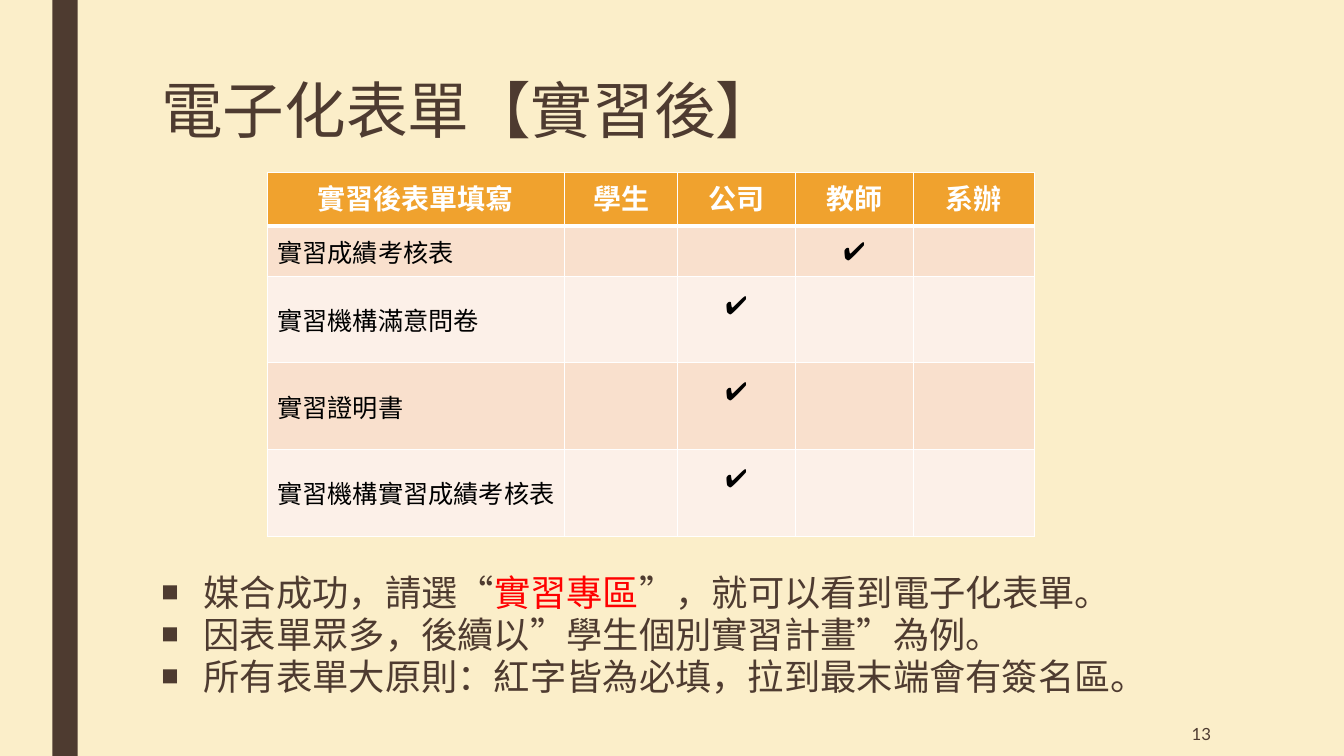
from lxml import etree
from pptx import Presentation
from pptx.dml.color import RGBColor
from pptx.enum import shapes, text
from pptx.oxml import ns
from pptx.util import Inches, Pt

CJK = "Noto Sans CJK TC"
BROWN, WHITE, BLACK, RED = "4E3B30", "FFFFFF", "000000", "FF0000"
CREAM, ORANGE = "FBEEC9", "F0A22E"
BANDS = ("F9E0CD", "FCF0E8")

HEADINGS = ("實習後表單填寫", "學生", "公司", "教師", "系辦")
COMPANY, TEACHER = 2, 3
FORMS = (
    ("實習成績考核表", TEACHER),
    ("實習機構滿意問卷", COMPANY),
    ("實習證明書", COMPANY),
    ("實習機構實習成績考核表", COMPANY),
)
COLUMN_WIDTHS = (2.95, 1.12, 1.17, 1.17, 1.2)
ROW_HEIGHTS = (0.53, 0.5, 0.86, 0.86, 0.86)
NOTES = (
    (("媒合成功，請選“", BROWN), ("實習專區", RED),
     ("”，就可以看到電子化表單。", BROWN)),
    (("因表單眾多，後續以”學生個別實習計畫”為例。", BROWN),),
    (("所有表單大原則：紅字皆為必填，拉到最末端會有簽名區。", BROWN),),
)


def paint(color_format, color):
    color_format.rgb = RGBColor.from_string(color)


def fill(target, color):
    target.fill.solid()
    paint(target.fill.fore_color, color)


def add_xml(parent, tag, **attributes):
    return etree.SubElement(parent, ns.qn(tag), attributes)


def write(paragraph, wording, size=18, font="Lato", color=BROWN, bold=False, align=None):
    run = paragraph.add_run()
    run.text = wording
    run.font.size, run.font.name, run.font.bold = Pt(size), font, bold
    paint(run.font.color, color)
    add_xml(run._r.get_or_add_rPr(), "a:ea", typeface=CJK)
    if align is not None:
        paragraph.alignment = align


def add_borders(cell, bottom_width):
    properties = cell._tc.get_or_add_tcPr()
    widths = {"a:lnL": 1, "a:lnR": 1, "a:lnT": 1, "a:lnB": bottom_width}
    for tag, width in widths.items():
        border = add_xml(properties, tag, w=str(Pt(width)))
        add_xml(add_xml(border, "a:solidFill"), "a:srgbClr", val=WHITE)


def add_bullet(paragraph):
    properties = paragraph._p.get_or_add_pPr()
    properties.set("marL", str(Inches(0.42)))
    properties.set("indent", str(Inches(-0.42)))
    add_xml(properties, "a:buSzPct", val="80000")
    add_xml(properties, "a:buFont", typeface="Arial")
    add_xml(properties, "a:buChar", char="■")


class FormSlide:
    """Holds the slide and draws its parts in the shared style."""

    def __init__(self, presentation):
        self.slide = presentation.slides.add_slide(presentation.slide_layouts[1])
        fill(self.slide.background, CREAM)

    def place(self, holder, left, top, width, height, anchor=text.MSO_ANCHOR.TOP):
        """Move a text holder and return its text frame."""
        holder.left, holder.top = Inches(left), Inches(top)
        holder.width, holder.height = Inches(width), Inches(height)
        frame = holder.text_frame
        frame.word_wrap = True
        frame.auto_size = text.MSO_AUTO_SIZE.NONE
        frame.vertical_anchor = anchor
        return frame

    def stripe(self, left, width, height):
        bar = self.slide.shapes.add_shape(
            shapes.MSO_SHAPE.RECTANGLE, Inches(left), 0, Inches(width), Inches(height))
        bar.shadow.inherit = False
        fill(bar, BROWN)
        bar.line.fill.background()

    def title(self, wording):
        frame = self.place(self.slide.shapes.title, 1.5, 0.75, 10.5, 1.62)
        heading = frame.paragraphs[0]
        heading.line_spacing = 0.89
        write(heading, wording, size=44, align=text.PP_ALIGN.LEFT)

    def form_table(self, left, top):
        table = self.slide.shapes.add_table(
            len(ROW_HEIGHTS), len(COLUMN_WIDTHS), Inches(left), Inches(top),
            Inches(sum(COLUMN_WIDTHS)), Inches(sum(ROW_HEIGHTS))).table
        for column, width in zip(table.columns, COLUMN_WIDTHS):
            column.width = Inches(width)
        for row, height in zip(table.rows, ROW_HEIGHTS):
            row.height = Inches(height)

        center = text.PP_ALIGN.CENTER
        for column, heading in enumerate(HEADINGS):
            cell = table.cell(0, column)
            add_borders(cell, 3)
            fill(cell, ORANGE)
            write(cell.text_frame.paragraphs[0], heading, size=20, color=WHITE,
                  bold=True, align=center)
        for row, (form, filler) in enumerate(FORMS, start=1):
            for column in range(len(HEADINGS)):
                cell = table.cell(row, column)
                add_borders(cell, 1)
                fill(cell, BANDS[(row - 1) % 2])
                cell.vertical_anchor = text.MSO_ANCHOR.MIDDLE
            write(table.cell(row, 0).text_frame.paragraphs[0], form, color=BLACK,
                  font="Lato" if row == 1 else "Arial")
            tick = table.cell(row, filler)
            write(tick.text_frame.paragraphs[0], "✔", color=BLACK, align=center)
            if filler == COMPANY:
                tick.margin_bottom = Inches(0.35)

    def notes(self):
        frame = self.place(self.slide.placeholders[1], 1.5, 5.71, 10.87, 1.51)
        for index, pieces in enumerate(NOTES):
            note = frame.add_paragraph() if index else frame.paragraphs[0]
            note.line_spacing = 0.74
            note.space_before, note.space_after = Pt(6), Pt(1.2)
            add_bullet(note)
            for wording, color in pieces:
                write(note, wording, size=25.9, font=CJK, color=color)

    def page_number(self, number):
        box = self.slide.shapes.add_textbox(0, 0, 0, 0)
        frame = self.place(box, 10.36, 7.06, 1.75, 0.44, text.MSO_ANCHOR.MIDDLE)
        write(frame.paragraphs[0], number, size=12, align=text.PP_ALIGN.RIGHT)


def main():
    presentation = Presentation()
    presentation.slide_width, presentation.slide_height = Inches(13.33), Inches(7.5)
    page = FormSlide(presentation)
    page.stripe(0.52, 0.25, 7.5)
    page.title("電子化表單【實習後】")
    page.form_table(2.65, 1.71)
    page.notes()
    page.page_number("13")
    presentation.save("out.pptx")


if __name__ == "__main__":
    main()
